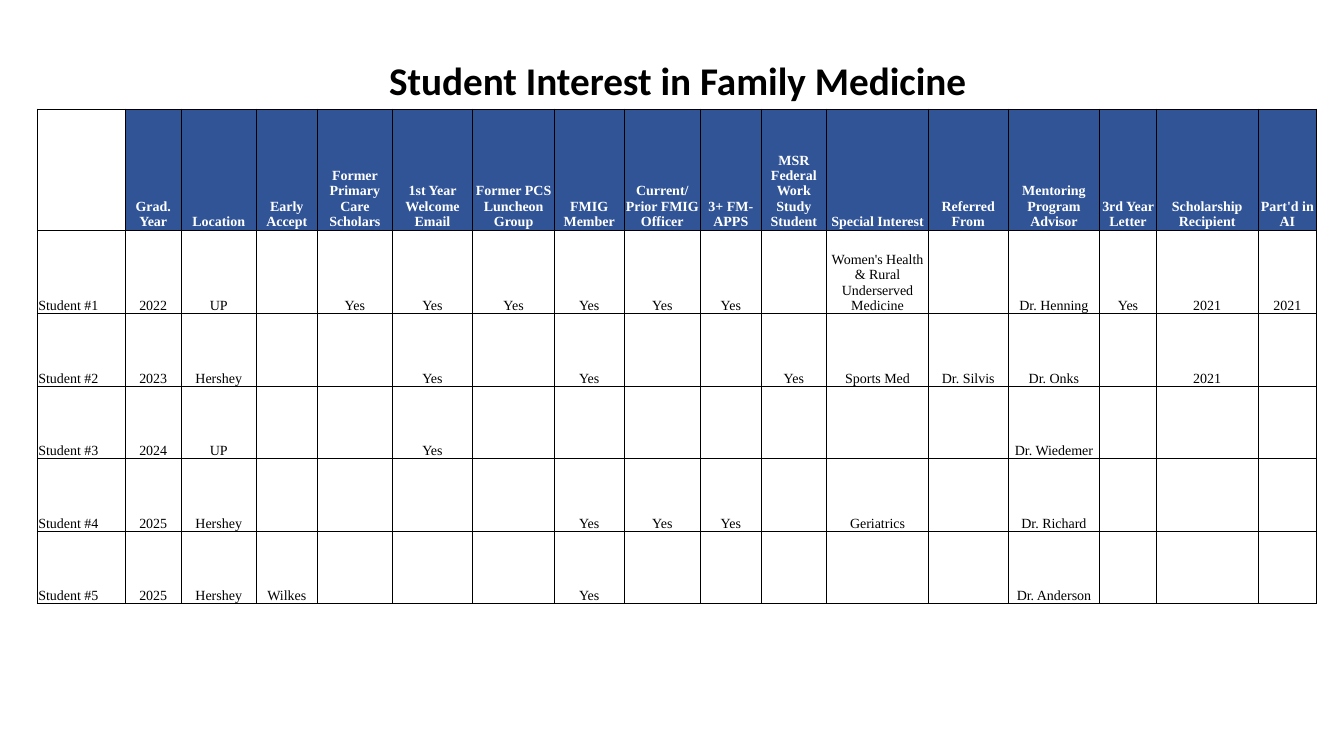
from dataclasses import dataclass

import pptx
import pptx.dml.color
import pptx.enum.text
import pptx.oxml
import pptx.oxml.ns
import pptx.presentation
import pptx.slide
import pptx.table
import pptx.util

BLACK = pptx.dml.color.RGBColor(0x00, 0x00, 0x00)
WHITE = pptx.dml.color.RGBColor(0xFF, 0xFF, 0xFF)
HEADER_BLUE = pptx.dml.color.RGBColor(0x30, 0x54, 0x96)

SLIDE_WIDTH = pptx.util.Inches(13.33)
SLIDE_HEIGHT = pptx.util.Inches(7.5)
TABLE_LEFT, TABLE_TOP = pptx.util.Inches(0.37), pptx.util.Inches(1.08)
TABLE_WIDTH = pptx.util.Inches(12.69)
ROW_HEIGHTS = (1.2, 0.83, 0.72, 0.72, 0.72, 0.72)
CELL_INSET = pptx.util.Inches(0.01)


@dataclass(frozen=True)
class Column:
    """A table column: its relative width, heading and one entry per student."""

    width: float
    heading: str
    entries: tuple[str, ...]


COLUMNS = (
    Column(0.87, "", tuple(f"Student #{number}" for number in range(1, 6))),
    Column(0.56, "Grad. Year", ("2022", "2023", "2024", "2025", "2025")),
    Column(0.74, "Location", ("UP", "Hershey", "UP", "Hershey", "Hershey")),
    Column(0.61, "Early Accept", ("", "", "", "", "Wilkes")),
    Column(0.74, "Former Primary Care Scholars", ("Yes", "", "", "", "")),
    Column(0.8, "1st Year Welcome Email", ("Yes", "Yes", "Yes", "", "")),
    Column(0.81, "Former PCS Luncheon Group", ("Yes", "", "", "", "")),
    Column(0.69, "FMIG Member", ("Yes", "Yes", "", "Yes", "Yes")),
    Column(0.76, "Current/ Prior FMIG Officer", ("Yes", "", "", "Yes", "")),
    Column(0.6, "3+ FM-APPS", ("Yes", "", "", "Yes", "")),
    Column(0.65, "MSR Federal Work Study Student", ("", "Yes", "", "", "")),
    Column(1.01, "Special Interest",
           ("Women's Health & Rural Underserved Medicine", "Sports Med", "", "Geriatrics", "")),
    Column(0.79, "Referred From", ("", "Dr. Silvis", "", "", "")),
    Column(0.91, "Mentoring Program Advisor",
           ("Dr. Henning", "Dr. Onks", "Dr. Wiedemer", "Dr. Richard", "Dr. Anderson")),
    Column(0.56, "3rd Year Letter", ("Yes", "", "", "", "")),
    Column(1.01, "Scholarship Recipient", ("2021", "2021", "", "", "")),
    Column(0.58, "Part'd in AI", ("2021", "", "", "", "")),
)


def add_borders(cell: pptx.table._Cell) -> None:
    """Draw a thin black line on all four sides; lines precede the fill."""
    properties = cell._tc.get_or_add_tcPr()
    for position, side in enumerate(("lnL", "lnR", "lnT", "lnB")):
        line = pptx.oxml.parse_xml(
            f'<a:{side} {pptx.oxml.ns.nsdecls("a")} w="{pptx.util.Pt(0.5)}">'
            f'<a:solidFill><a:srgbClr val="{BLACK}"/></a:solidFill></a:{side}>'
        )
        properties.insert(position, line)


def format_cell(cell: pptx.table._Cell, text: str, is_header: bool, is_label: bool) -> None:
    """Fill in one cell with its text, alignment, colours and borders."""
    cell.text = text
    cell.vertical_anchor = pptx.enum.text.MSO_ANCHOR.BOTTOM
    cell.margin_left = cell.margin_right = cell.margin_top = CELL_INSET
    cell.margin_bottom = 0

    paragraph = cell.text_frame.paragraphs[0]
    alignments = pptx.enum.text.PP_ALIGN
    paragraph.alignment = alignments.LEFT if is_label else alignments.CENTER
    paragraph.font.name = "Times New Roman"
    paragraph.font.size = pptx.util.Pt(10)
    paragraph.font.bold = is_header
    paragraph.font.color.rgb = WHITE if is_header else BLACK

    if is_header and not is_label:
        cell.fill.solid()
        cell.fill.fore_color.rgb = HEADER_BLUE
    else:
        cell.fill.background()
    add_borders(cell)


def add_title(slide: pptx.slide.Slide) -> None:
    """Place the heading centred above the table."""
    title = slide.shapes.title
    title.left, title.top = pptx.util.Inches(3.2), pptx.util.Inches(0.51)
    title.width, title.height = pptx.util.Inches(7.04), pptx.util.Inches(0.57)
    title.text = "Student Interest in Family Medicine"
    title.text_frame.vertical_anchor = pptx.enum.text.MSO_ANCHOR.TOP
    title.text_frame.word_wrap = True
    paragraph = title.text_frame.paragraphs[0]
    paragraph.alignment = pptx.enum.text.PP_ALIGN.CENTER
    paragraph.font.name = "Calibri"
    paragraph.font.size = pptx.util.Pt(28)
    paragraph.font.bold = True
    paragraph.font.color.rgb = BLACK


def add_student_table(slide: pptx.slide.Slide) -> None:
    """Build the student table column by column."""
    table_height = pptx.util.Inches(sum(ROW_HEIGHTS))
    table = slide.shapes.add_table(
        len(ROW_HEIGHTS), len(COLUMNS), TABLE_LEFT, TABLE_TOP, TABLE_WIDTH, table_height
    ).table
    table.first_row = table.horz_banding = False

    for row, height in zip(table.rows, ROW_HEIGHTS):
        row.height = pptx.util.Inches(height)

    total_width = sum(column.width for column in COLUMNS)
    for column_index, column in enumerate(COLUMNS):
        table.columns[column_index].width = round(TABLE_WIDTH * column.width / total_width)
        for row_index, text in enumerate((column.heading, *column.entries)):
            cell = table.cell(row_index, column_index)
            format_cell(cell, text, is_header=row_index == 0, is_label=column_index == 0)


def main() -> None:
    presentation = pptx.Presentation()
    presentation.slide_width = SLIDE_WIDTH
    presentation.slide_height = SLIDE_HEIGHT

    # Title-only layout
    slide = presentation.slides.add_slide(presentation.slide_layouts[5])
    add_student_table(slide)
    add_title(slide)
    presentation.save("out.pptx")


if __name__ == "__main__":
    main()
